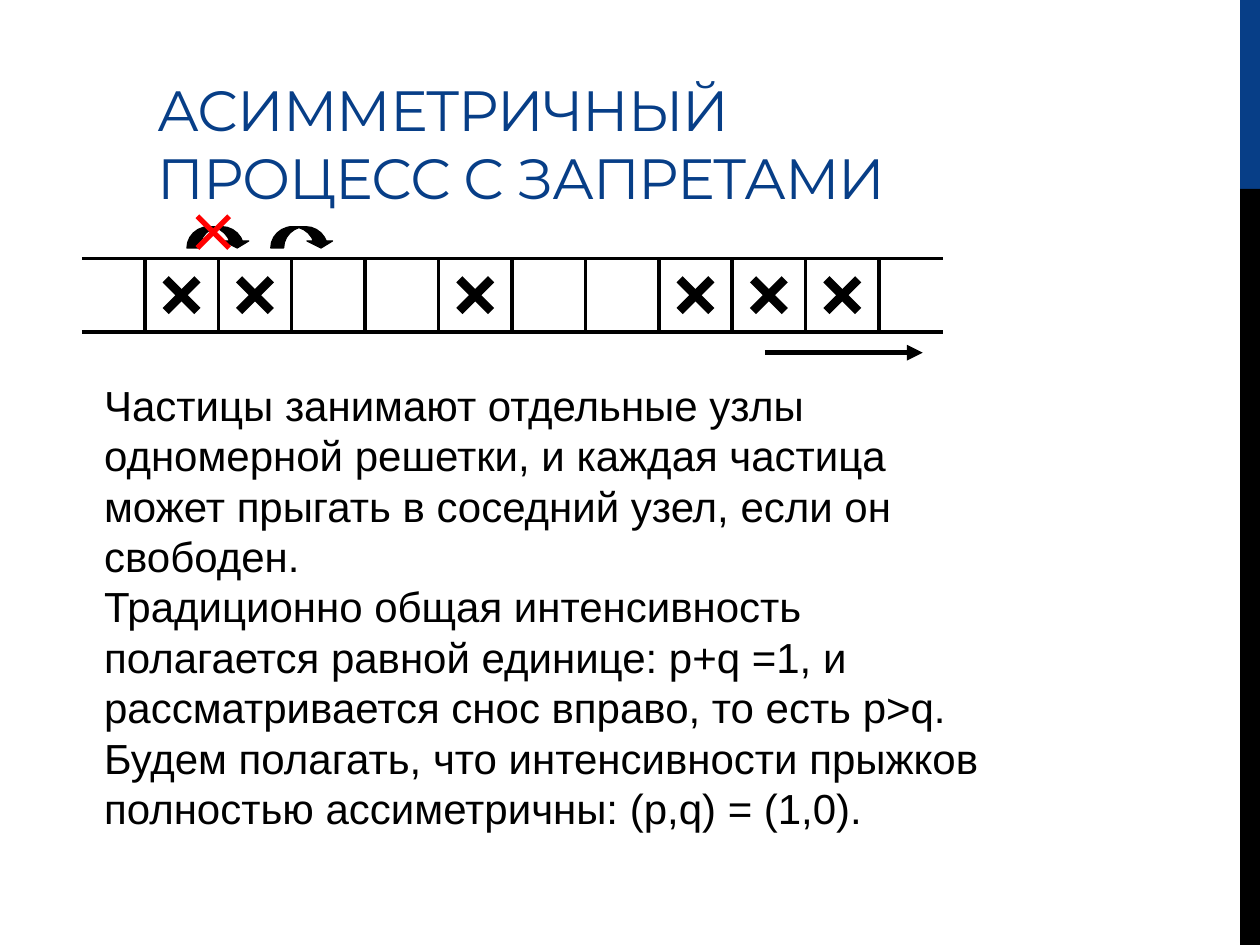
"""Builds a slide on the asymmetric exclusion process with a lattice diagram."""
from lxml import etree
from pptx import Presentation
from pptx import util as u
from pptx.dml.color import RGBColor
from pptx.enum import shapes, text
from pptx.oxml import ns

BLUE = RGBColor(0x07, 0x3E, 0x87)
BLACK = RGBColor(0, 0, 0)
RED = RGBColor(0xFF, 0, 0)

TITLE = "АСИММЕТРИЧНЫЙ ПРОЦЕСС С ЗАПРЕТАМИ"
BODY = [
    "Частицы занимают отдельные узлы одномерной решетки, и каждая частица "
    "может прыгать в соседний узел, если он свободен.",
    "Традиционно общая интенсивность полагается равной единице: p+q =1, и "
    "рассматривается снос вправо, то есть p>q. Будем полагать, что "
    "интенсивности прыжков полностью ассиметричны: (p,q) = (1,0).",
]

CELL = 1.48
CELL_COUNT = 10
LATTICE_LEFT, LATTICE_TOP = 2.92, 5.21
RAIL_LEFT, RAIL_RIGHT = 1.65, 19
OCCUPIED = (0, 1, 4, 7, 8, 9)
CROSS = 0.64
CROSS_INSET = (CELL - CROSS) / 2


class SlideBuilder:
    def __init__(self, slide):
        self.slide = slide
        self.font_name = "Arial"
        self.title_font_name = "Montserrat"

    def group(self):
        return self.slide.shapes.add_group_shape().shapes

    def title(self, wording, left, top, width, height):
        shape = self.slide.shapes.title
        shape.left, shape.top = u.Cm(left), u.Cm(top)
        shape.width, shape.height = u.Cm(width), u.Cm(height)
        frame = shape.text_frame
        frame.text = wording
        frame.word_wrap = True
        frame.auto_size = text.MSO_AUTO_SIZE.NONE
        frame.vertical_anchor = text.MSO_ANCHOR.BOTTOM
        paragraph = frame.paragraphs[0]
        paragraph.alignment = text.PP_ALIGN.LEFT
        self.style(paragraph, self.title_font_name, 32.4, BLUE)
        paragraph.runs[0].font._element.set("spc", "-60")

    def style(self, paragraph, name, size, color):
        paragraph.font.name = name
        paragraph.font.size = u.Pt(size)
        paragraph.font.color.rgb = color

    def body(self, wordings, left, top, width, height):
        shape = self.slide.shapes.add_textbox(
            u.Cm(left), u.Cm(top), u.Cm(width), u.Cm(height))
        frame = shape.text_frame
        frame.text = "\n".join(wordings)
        frame.word_wrap = True
        frame.auto_size = text.MSO_AUTO_SIZE.SHAPE_TO_FIT_TEXT
        for paragraph in frame.paragraphs:
            self.style(paragraph, self.font_name, 24, BLACK)

    def strip(self, color, top, height):
        shape = self.slide.shapes.add_shape(
            shapes.MSO_SHAPE.RECTANGLE, u.Cm(25), u.Cm(top), u.Cm(0.4), u.Cm(height))
        shape.shadow.inherit = False
        shape.fill.solid()
        shape.fill.fore_color.rgb = color
        shape.line.fill.background()

    def line(self, container, start, end, width, color=BLACK, arrow=False):
        connector = container.add_connector(
            shapes.MSO_CONNECTOR.STRAIGHT, *(u.Cm(value) for value in (*start, *end)))
        connector.line.color.rgb = color
        connector.line.width = u.Pt(width)
        properties = connector._element.spPr
        if arrow:
            etree.SubElement(properties.find(ns.qn("a:ln")), ns.qn("a:tailEnd"), type="triangle")
        etree.SubElement(properties, ns.qn("a:effectLst"))

    def cross(self, container, left, top, width, color=BLACK):
        right, bottom = left + CROSS, top + CROSS
        self.line(container, (left, top), (right, bottom), width, color)
        self.line(container, (left, bottom), (right, top), width, color)

    def jump(self, container, left, top):
        shape = container.add_shape(
            shapes.MSO_SHAPE.CURVED_DOWN_ARROW, u.Cm(left), u.Cm(top), u.Cm(1.27), u.Cm(0.43))
        shape.shadow.inherit = False
        for index, value in enumerate((0.6, 1.2, 0.33)):
            shape.adjustments[index] = value
        shape.fill.solid()
        shape.fill.fore_color.rgb = BLACK
        shape.line.color.rgb = BLACK
        shape.line.width = u.Pt(0.75)

    def lattice(self):
        grid = self.group()
        bottom = LATTICE_TOP + CELL
        for y in (LATTICE_TOP, bottom):
            self.line(grid, (RAIL_LEFT, y), (RAIL_RIGHT, y), 2)
        for index in range(CELL_COUNT + 1):
            x = LATTICE_LEFT + index * CELL
            self.line(grid, (x, LATTICE_TOP), (x, bottom), 2)
        for index in OCCUPIED:
            x = LATTICE_LEFT + index * CELL + CROSS_INSET
            self.cross(self.group(), x, LATTICE_TOP + CROSS_INSET, 5)


def main():
    presentation = Presentation()
    presentation.slide_width, presentation.slide_height = u.Cm(25.4), u.Cm(19.05)
    builder = SlideBuilder(presentation.slides.add_slide(presentation.slide_layouts[5]))
    builder.strip(BLUE, 0, 3.81)
    builder.strip(BLACK, 3.81, 15.24)
    builder.title(TITLE, 2.92, 0.56, 16.08, 3.81)
    builder.lattice()
    builder.line(builder.slide.shapes, (15.42, 7.11), (18.6, 7.11), 3, arrow=True)
    builder.jump(builder.slide.shapes, 5.46, 4.57)
    forbidden = builder.group()
    builder.jump(forbidden, 3.77, 4.57)
    builder.cross(forbidden, 3.98, 4.36, 3, RED)
    builder.body(BODY, 1.85, 7.52, 18.21, 9.5)
    presentation.save("out.pptx")


if __name__ == "__main__":
    main()
